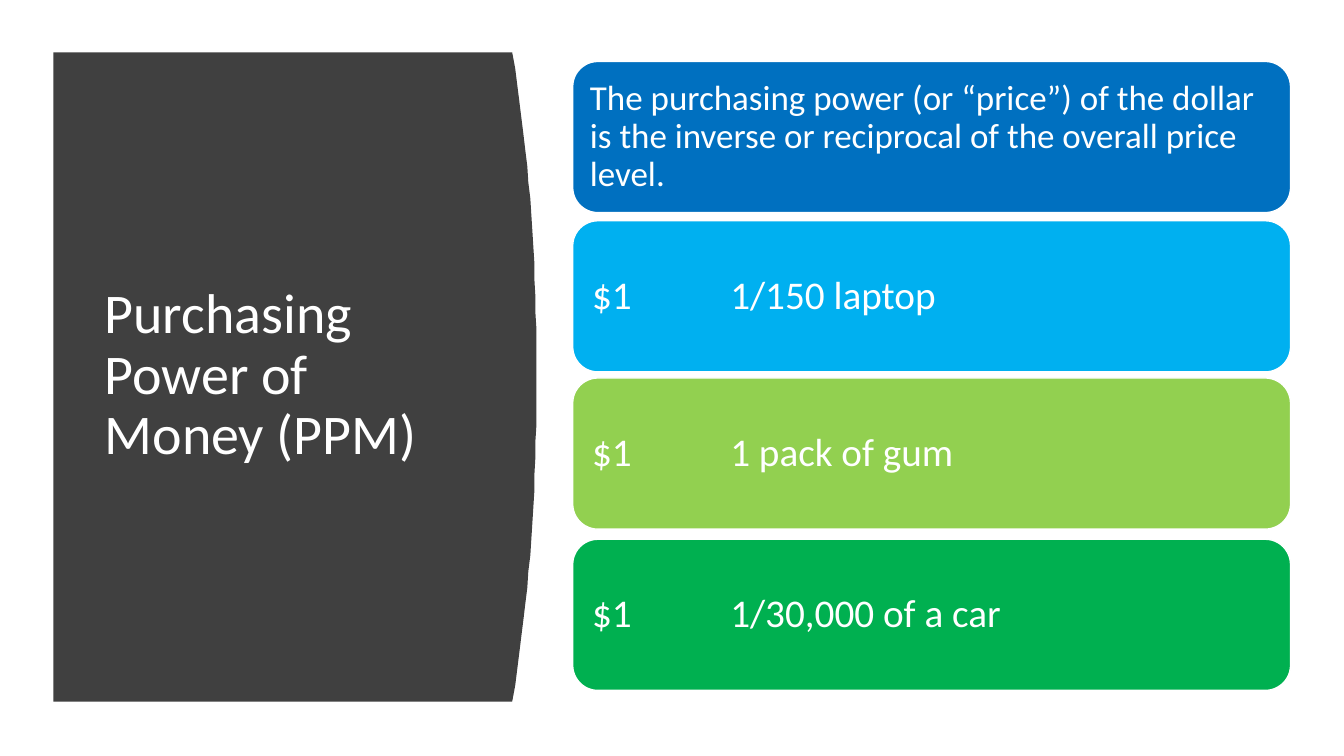
import pptx
import pptx.dml.color
import pptx.enum.shapes
import pptx.enum.text
import pptx.oxml
import pptx.oxml.ns
import pptx.util

RGB = pptx.dml.color.RGBColor
WHITE = RGB(0xFF, 0xFF, 0xFF)
CHARCOAL = RGB(0x40, 0x40, 0x40)
BLUE = RGB(0x00, 0x70, 0xC0)
SKY = RGB(0x00, 0xB0, 0xF0)
LIME = RGB(0x92, 0xD0, 0x50)
GREEN = RGB(0x00, 0xB0, 0x50)

PX = 9144  # EMU per px, 100 px to the inch


def set_text(sp, text, size=28, color=WHITE, font="Calibri", inset=10, tab=None):
    tf = sp.text_frame
    tf.word_wrap = True
    tf.vertical_anchor = pptx.enum.text.MSO_ANCHOR.MIDDLE
    tf.margin_left = tf.margin_right = inset * PX
    tf.margin_top = tf.margin_bottom = inset * PX
    p = tf.paragraphs[0]
    p.alignment = pptx.enum.text.PP_ALIGN.LEFT
    p.line_spacing = 0.9
    r = p.add_run()
    r.text = text
    r.font.name = font
    r.font.size = pptx.util.Pt(size)
    r.font.color.rgb = color
    if tab:
        p._p.get_or_add_pPr().append(pptx.oxml.parse_xml(
            f'<a:tabLst {pptx.oxml.ns.nsdecls("a")}>'
            f'<a:tab pos="{tab * PX}" algn="l"/></a:tabLst>'))


class SlideBuilder:
    def __init__(self, prs):
        self.s = prs.slides.add_slide(prs.slide_layouts[6])

    def fill(self, sp, color):
        sp.shadow.inherit = False
        sp.fill.solid()
        sp.fill.fore_color.rgb = color

    def curved_panel(self, left, top, edge, bulge, height, color, steps=40):
        """Draw a panel whose right side bows outwards by bulge."""
        curve = []
        for i in range(steps + 1):
            t = abs(2 * i / steps - 1)
            curve.append((edge + bulge * (1 - t ** 2.2), top + height * i / steps))
        fb = self.s.shapes.build_freeform(left, top, scale=PX)
        fb.add_line_segments(curve + [(left, top + height)], close=True)
        sp = fb.convert_to_shape()
        self.fill(sp, color)
        sp.line.fill.background()

    def text(self, left, top, width, height, text, **fmt):
        sp = self.s.shapes.add_textbox(*(n * PX for n in (left, top, width, height)))
        set_text(sp, text, **fmt)

    def card(self, left, top, width, height, color, text, **fmt):
        sp = self.s.shapes.add_shape(
            pptx.enum.shapes.MSO_SHAPE.ROUNDED_RECTANGLE,
            *(n * PX for n in (left, top, width, height)))
        self.fill(sp, color)
        sp.line.color.rgb = WHITE
        sp.line.width = pptx.util.Pt(1)
        set_text(sp, text, **fmt)


def main():
    prs = pptx.Presentation()
    prs.slide_width = 1333 * PX
    prs.slide_height = 750 * PX
    slide = SlideBuilder(prs)

    # Title panel
    slide.curved_panel(53, 52, 508, 24, 644, CHARCOAL)
    slide.text(94, 111, 374, 524, "Purchasing Power of Money (PPM)", size=40)

    # Definition and what one dollar buys
    definition = ("The purchasing power (or “price”) of the dollar is the "
                  "inverse or reciprocal of the overall price level.")
    example = dict(inset=12, tab=137)
    cards = [
        (61, BLUE, definition, dict(size=25)),
        (219, SKY, "$1\t1/150 laptop", example),
        (375, LIME, "$1\t1 pack of gum", example),
        (535, GREEN, "$1\t1/30,000 of a car", example),
    ]
    for top, color, text, fmt in cards:
        slide.card(568, top, 712, 150, color, text, **fmt)

    prs.save("out.pptx")


if __name__ == "__main__":
    main()
